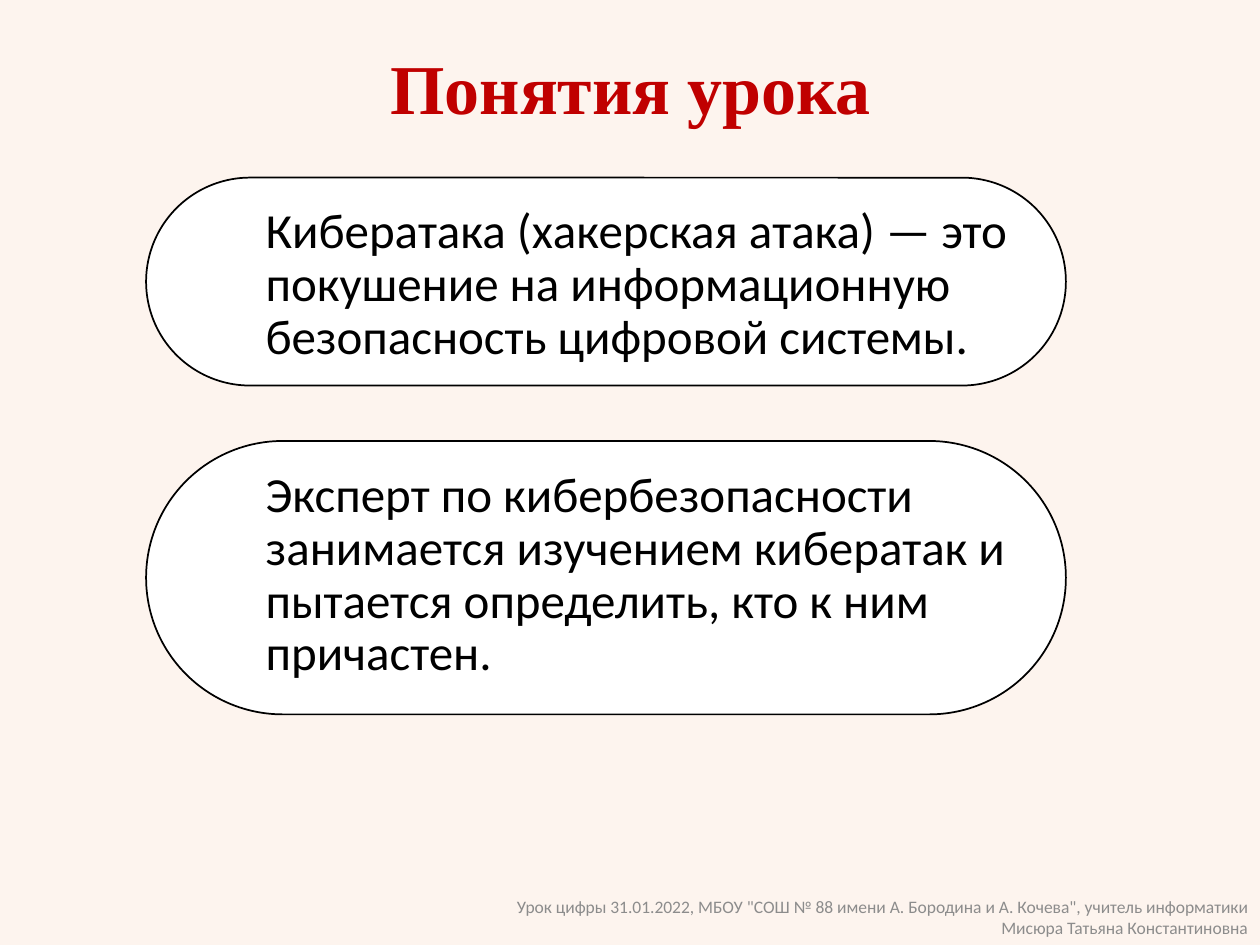
from pptx import Presentation
from pptx.dml.color import RGBColor
from pptx.enum.shapes import MSO_SHAPE
from pptx.enum.text import MSO_ANCHOR, PP_ALIGN
from pptx.util import Inches, Pt


def color(value):
    return RGBColor.from_string(value)


def add_text(slide, text, box, anchor, paragraph_format, font_format, font_color):
    shape = slide.shapes.add_textbox(*[Inches(length) for length in box])
    shape.text_frame.word_wrap = True
    shape.text_frame.vertical_anchor = anchor
    paragraph = shape.text_frame.paragraphs[0]
    run = paragraph.add_run()
    run.text = text
    for name, value in paragraph_format.items():
        setattr(paragraph, name, value)
    for name, value in font_format.items():
        setattr(run.font, name, value)
    run.font.color.rgb = color(font_color)


presentation = Presentation()
presentation.slide_width = Inches(10)
presentation.slide_height = Inches(7.5)
slide = presentation.slides.add_slide(presentation.slide_layouts[6])
slide.background.fill.solid()
slide.background.fill.fore_color.rgb = color("FDF4EE")

for top, height in [(3.5, 2.17), (1.41, 1.65)]:
    panel = slide.shapes.add_shape(
        MSO_SHAPE.ROUNDED_RECTANGLE, Inches(1.16), Inches(top), Inches(7.3), Inches(height)
    )
    panel.adjustments[0] = 0.5
    panel.shadow.inherit = False
    panel.fill.solid()
    panel.fill.fore_color.rgb = color("FFFFFF")
    panel.line.color.rgb = color("000000")
    panel.line.width = Pt(1)

add_text(
    slide,
    "Понятия урока",
    (0.72, 0, 8.57, 1.46),
    MSO_ANCHOR.MIDDLE,
    {"alignment": PP_ALIGN.CENTER, "line_spacing": 0.9},
    {"name": "Times New Roman", "size": Pt(40), "bold": True},
    "C00000",
)

definitions = [
    (
        "Кибератака (хакерская атака) — это покушение на информационную "
        "безопасность цифровой системы.",
        (2.01, 1.59, 6.23, 1.41),
    ),
    (
        "Эксперт по кибербезопасности занимается изучением кибератак и "
        "пытается определить, кто к ним причастен.",
        (2.01, 3.68, 7.01, 1.8),
    ),
]
for text, box in definitions:
    add_text(
        slide,
        text,
        box,
        MSO_ANCHOR.TOP,
        {"alignment": PP_ALIGN.LEFT, "line_spacing": 0.9},
        {"name": "Calibri", "size": Pt(28)},
        "000000",
    )

add_text(
    slide,
    'Урок цифры 31.01.2022, МБОУ "СОШ № 88 имени А. Бородина и А. Кочева", '
    "учитель информатики Мисюра Татьяна Константиновна",
    (3.52, 7.06, 6.48, 0.44),
    MSO_ANCHOR.TOP,
    {"alignment": PP_ALIGN.RIGHT},
    {"name": "Calibri", "size": Pt(10)},
    "8C8C8C",
)

presentation.save("out.pptx")
